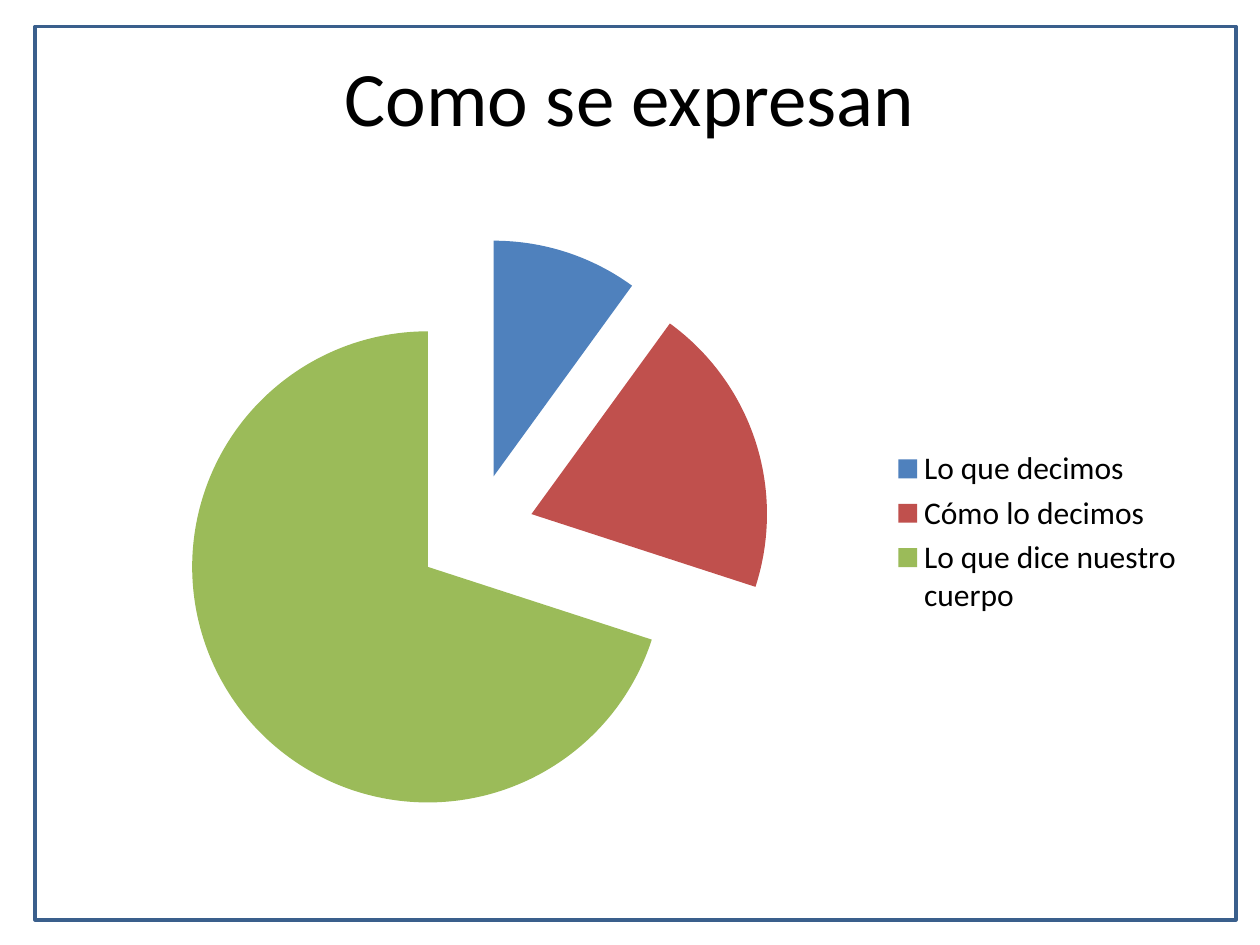
from pptx import Presentation
from pptx.chart.data import CategoryChartData
from pptx.dml.color import RGBColor
from pptx.enum.chart import XL_CHART_TYPE, XL_LEGEND_POSITION
from pptx.enum.shapes import MSO_SHAPE
from pptx.enum.text import MSO_ANCHOR, PP_ALIGN
from pptx.util import Inches, Pt

RECTANGLE = MSO_SHAPE.RECTANGLE
EXPLODED_PIE = XL_CHART_TYPE.PIE_EXPLODED
LEGEND_RIGHT = XL_LEGEND_POSITION.RIGHT
TOP = MSO_ANCHOR.TOP
CENTER = PP_ALIGN.CENTER

WHITE = RGBColor(0xFF, 0xFF, 0xFF)
BLACK = RGBColor(0x00, 0x00, 0x00)
FRAME_BLUE = RGBColor(0x3A, 0x5F, 0x8C)
BLUE = RGBColor(0x4F, 0x81, 0xBD)
RED = RGBColor(0xC0, 0x50, 0x4D)
GREEN = RGBColor(0x9B, 0xBB, 0x59)
FONT = "Calibri"


def add_text(slide, text, left, top, width, height, size, color, align):
    box = slide.shapes.add_textbox(
        Inches(left), Inches(top), Inches(width), Inches(height))
    frame = box.text_frame
    frame.word_wrap = True
    frame.vertical_anchor = TOP
    frame.margin_top = Inches(0.09)
    paragraph = frame.paragraphs[0]
    paragraph.text = text
    paragraph.alignment = align
    paragraph.font.name = FONT
    paragraph.font.size = Pt(size)
    paragraph.font.color.rgb = color


prs = Presentation()
prs.slide_width = Inches(10)
prs.slide_height = Inches(7.5)
slide = prs.slides.add_slide(prs.slide_layouts[6])

border = slide.shapes.add_shape(
    RECTANGLE, Inches(0.28), Inches(0.21), Inches(9.53), Inches(7.09))
border.shadow.inherit = False
border.fill.solid()
border.fill.fore_color.rgb = WHITE
border.line.color.rgb = FRAME_BLUE
border.line.width = Pt(2)

add_text(slide, "Como se expresan", left=0.5, top=0.3, width=9, height=1.25,
         size=44, color=BLACK, align=CENTER)

expression = [
    ("Lo que decimos", 10, BLUE),
    ("Cómo lo decimos", 20, RED),
    ("Lo que dice nuestro cuerpo", 70, GREEN),
]
shares = CategoryChartData()
shares.categories = [name for name, share, color in expression]
shares.add_series("Series 1", [share for name, share, color in expression])

pie = slide.shapes.add_chart(
    EXPLODED_PIE, Inches(0.5), Inches(1.75), Inches(9), Inches(4.95), shares).chart
pie.has_title = False
pie.font.name = FONT
pie.font.size = Pt(18)
pie.font.color.rgb = BLACK
pie.has_legend = True
pie.legend.position = LEGEND_RIGHT
pie.legend.include_in_layout = False
pie.plots[0].vary_by_categories = True

slices = pie.plots[0].series[0].points
for index, (name, share, color) in enumerate(expression):
    fill = slices[index].format.fill
    fill.solid()
    fill.fore_color.rgb = color

prs.save("out.pptx")
